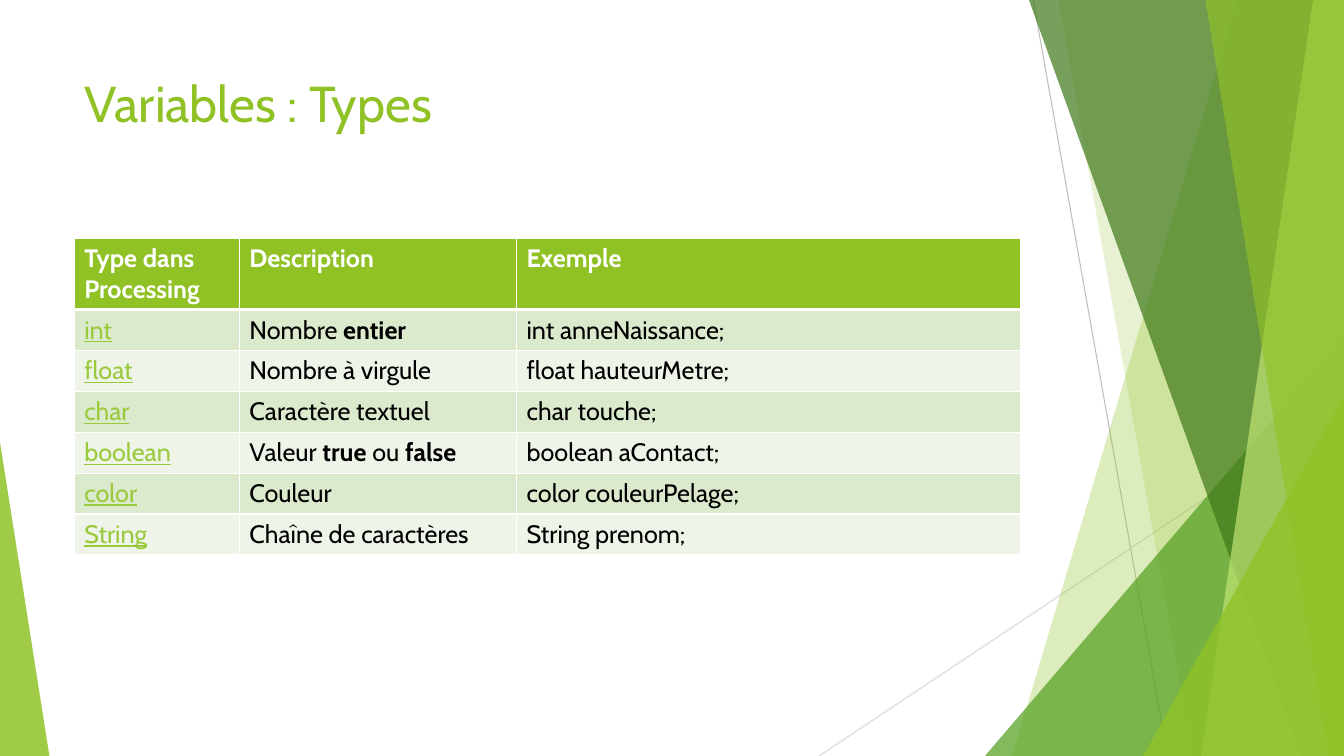
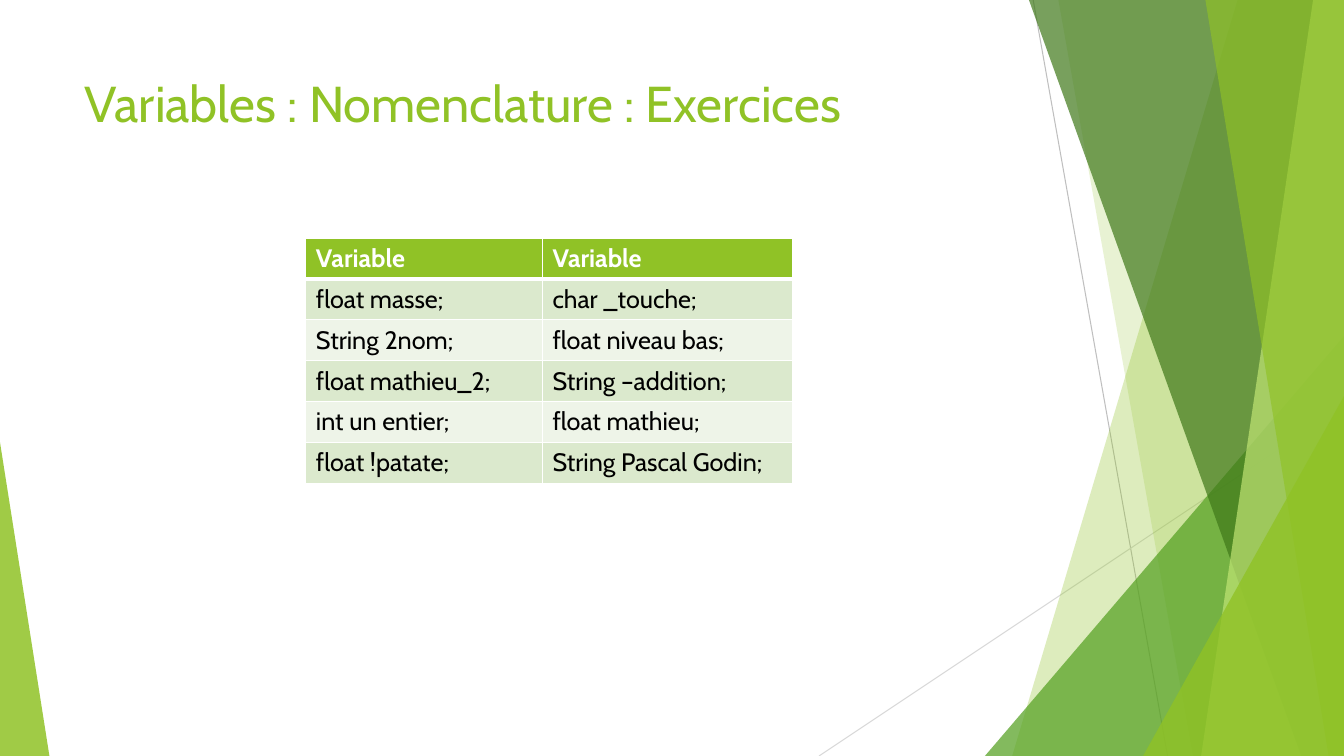
from pptx import Presentation
from pptx.dml.color import RGBColor
from pptx.enum import shapes, text
from pptx.oxml import parse_xml
from pptx.oxml.ns import nsdecls, qn
from pptx.util import Pt

# ---- Content: **...** marks bold text ----
SLIDES = [
    dict(title="Variables : Types", left=53, widths=[118, 198, 360], keywords=True, rows=[
        ("Type dans Processing", "Description", "Exemple"),
        ("int", "Nombre **entier**", "int anneNaissance;"),
        ("float", "Nombre à virgule", "float hauteurMetre;"),
        ("char", "Caractère textuel", "char touche;"),
        ("boolean", "Valeur **true** ou **false**", "boolean aContact;"),
        ("color", "Couleur", "color couleurPelage;"),
        ("String", "Chaîne de caractères", "String prenom;"),
    ]),
    dict(title="Variables : Nomenclature : Exercices", left=218.5, widths=[169, 178.5],
         keywords=False, rows=[
             ("Variable", "Variable"),
             ("float masse;", "char _touche;"),
             ("String 2nom;", "float niveau bas;"),
             ("float mathieu_2;", "String –addition;"),
             ("int un entier;", "float mathieu;"),
             ("float !patate;", "String Pascal Godin;"),
         ]),
]

# ---- Shared style ----
FONT = "Cabin"
WIDTH, HEIGHT = 960, 540
TABLE_TOP, ROW_HEIGHT = 170, 29.2
TITLE_BOX = (53, 48, 677, 104)
COLORS = dict(green="90C226", mid="54A021", dark="3F7819", light="C0E474",
              link="99CA3C", white="FFFFFF", black="000000", odd="DBE9CD",
              even="EEF4E8", gray="BFBFBF", pale="D9D9D9")

# Decoration, back to front
LINES = [((738, 0), (834, HEIGHT), "gray"), ((WIDTH, 290), (585, HEIGHT), "pale")]
# band: top x, bottom x (both run to the right edge); triangle: left, top, width, apex
DECOR = [
    ("band", (884, 723), "green", 30),
    ("band", (756, 852), "green", 20),
    ("triangle", (703.5, 240, 256.5, 1), "mid", 72),
    ("band", (735, 929.5), "dark", 70),
    ("band", (938, 858), "light", 70),
    ("band", (861, 949), "green", 65),
    ("triangle", (816.5, 283, 143.5, 1), "green", 80),
    ("triangle", (0, 316, 35.3, 0), "green", 85),
]


def rgb(name):
    return RGBColor.from_string(COLORS[name])


def pts(*values):
    return [Pt(v) for v in values]


def place(shape, box):
    shape.left, shape.top, shape.width, shape.height = pts(*box)


def style_run(r, size, color, bold=False, underline=False):
    f = r.font
    f.name, f.size, f.bold, f.underline = FONT, Pt(size), bold, underline
    f.color.rgb = rgb(color)


def draw_line(s, start, end, color):
    line = s.shapes.add_connector(shapes.MSO_CONNECTOR.STRAIGHT, *pts(*start, *end))
    line.line.color.rgb = rgb(color)
    line.line.width = Pt(0.75)
    line.element.spPr.append(parse_xml(f"<a:effectLst {nsdecls('a')}/>"))
    return line


def draw_decor(s, kind, geometry, color, opacity):
    if kind == "band":
        top_x, bottom_x = geometry
        outline = s.shapes.build_freeform(*pts(top_x, 0))
        outline.add_line_segments(
            [pts(WIDTH, 0), pts(WIDTH, HEIGHT), pts(bottom_x, HEIGHT)], close=True)
        shape = outline.convert_to_shape()
    else:
        left, top, width, apex = geometry
        shape = s.shapes.add_shape(shapes.MSO_SHAPE.ISOSCELES_TRIANGLE,
                                   *pts(left, top, width, HEIGHT - top))
        shape.adjustments[0] = apex
    shape.shadow.inherit = False
    shape.line.fill.background()
    shape.fill.solid()
    shape.fill.fore_color.rgb = rgb(color)
    fill_color = shape.element.spPr.find(qn("a:solidFill")).find(qn("a:srgbClr"))
    fill_color.append(parse_xml(f'<a:alpha {nsdecls("a")} val="{opacity * 1000}"/>'))
    return shape


def decorate_layout(layout, s):
    """Draw the decoration with the slide's tools, then move it to the layout."""
    parts = [draw_line(s, *line) for line in LINES] + [draw_decor(s, *d) for d in DECOR]
    for number, part in enumerate(parts, 100):
        part.element.xpath(".//p:cNvPr")[0].set("id", str(number))
        layout.shapes.element.append(part.element)


def set_title(s, title):
    tf = s.shapes.title.text_frame
    tf.text = title
    tf.vertical_anchor = text.MSO_ANCHOR.TOP
    tf.paragraphs[0].alignment = text.PP_ALIGN.LEFT
    style_run(tf.paragraphs[0].runs[0], 36, "green")


def set_borders(cell, row):
    tcPr = cell._tc.get_or_add_tcPr()
    thick = {0: "B", 1: "T"}.get(row)  # rule under the header
    for side in "LRTB":
        width = Pt(3 if side == thick else 1)
        tcPr.append(parse_xml(
            f'<a:ln{side} {nsdecls("a")} w="{width}"><a:solidFill>'
            f'<a:srgbClr val="{COLORS["white"]}"/></a:solidFill></a:ln{side}>'))


def fill_cell(cell, content, row, keyword):
    set_borders(cell, row)
    cell.fill.solid()
    cell.fill.fore_color.rgb = rgb("green" if row == 0 else "odd" if row % 2 else "even")
    color = "white" if row == 0 else "link" if keyword else "black"
    p = cell.text_frame.paragraphs[0]
    for i, part in enumerate(content.split("**")):
        if part:
            r = p.add_run()
            r.text = part
            style_run(r, 18, color, bold=row == 0 or i % 2 == 1, underline=keyword)


def add_table(s, left, widths, rows, keywords):
    table = s.shapes.add_table(
        len(rows), len(widths),
        *pts(left, TABLE_TOP, sum(widths), ROW_HEIGHT * len(rows))).table
    for column, width in zip(table.columns, widths):
        column.width = Pt(width)
    for i, row in enumerate(rows):
        table.rows[i].height = Pt(ROW_HEIGHT)
        for j, content in enumerate(row):
            fill_cell(table.cell(i, j), content, i, keywords and i > 0 and j == 0)


def main():
    prs = Presentation()
    prs.slide_width, prs.slide_height = pts(WIDTH, HEIGHT)
    layout = prs.slide_layouts[5]  # title only
    place(layout.placeholders[0], TITLE_BOX)
    for number, data in enumerate(SLIDES):
        s = prs.slides.add_slide(layout)
        if number == 0:
            decorate_layout(layout, s)
        set_title(s, data["title"])
        add_table(s, data["left"], data["widths"], data["rows"], data["keywords"])
    prs.save("out.pptx")


if __name__ == "__main__":
    main()
